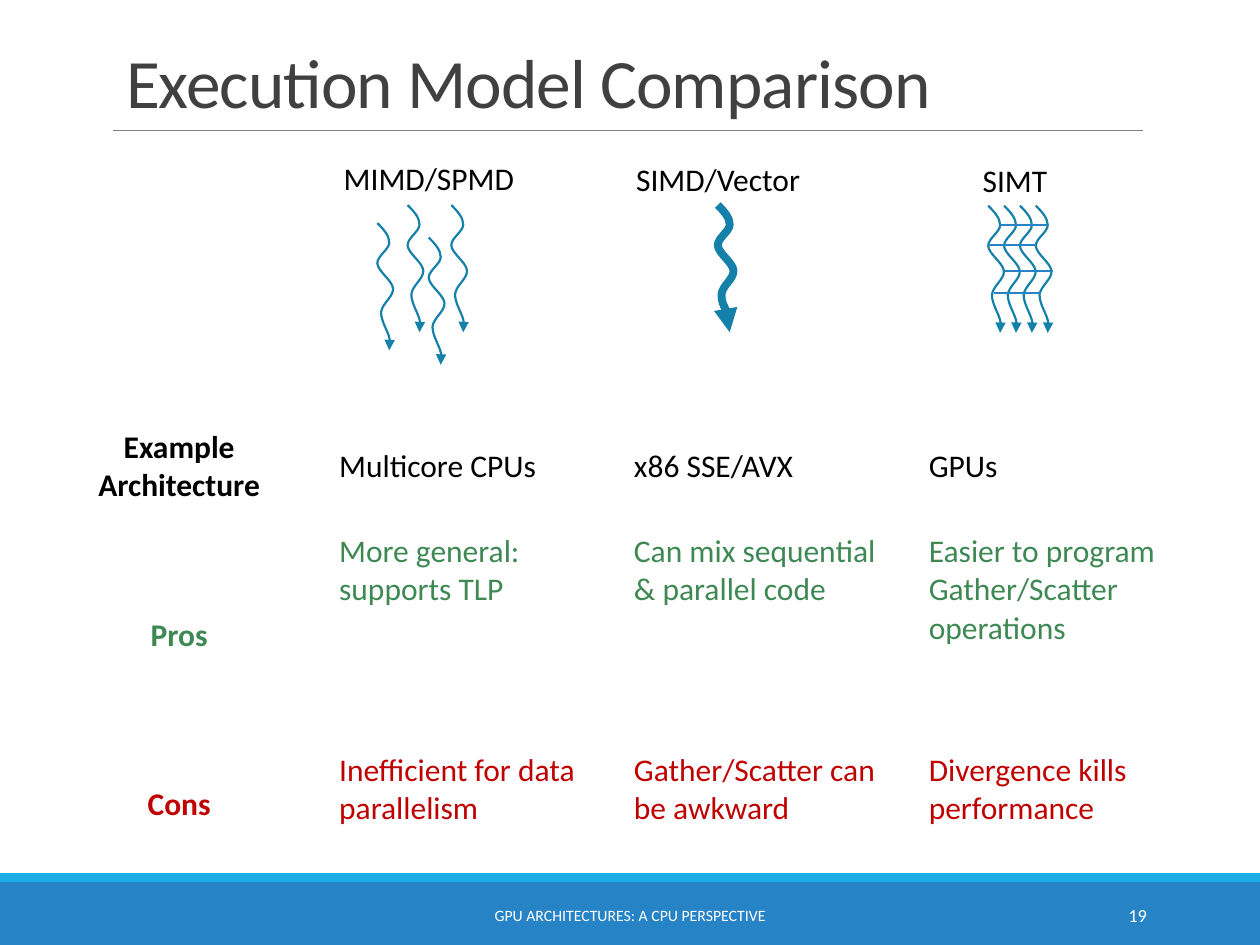
from collections import namedtuple

from lxml.etree import SubElement
from pptx import Presentation
from pptx.dml.color import RGBColor
from pptx.enum.shapes import MSO_CONNECTOR as Connector, MSO_SHAPE as Shape
from pptx.enum.text import MSO_ANCHOR as Anchor, MSO_AUTO_SIZE as AutoSize, PP_ALIGN as Align
from pptx.oxml.ns import qn
from pptx.util import Inches, Pt

Box = namedtuple("Box", "left top width height")

# The slide is a grid of 1000 columns by 750 rows.
COLUMNS, ROWS = 1000, 750
SLIDE_WIDTH, SLIDE_HEIGHT = Inches(10), Inches(7.5)
UNIT = SLIDE_WIDTH // COLUMNS

FONT = "Calibri"
BLACK, WHITE, GREEN, RED = "000000", "FFFFFF", "3E8853", "C00000"
BLUE, SKY, WAVE_BLUE = "2683C6", "1CADE4", "1580A9"

# Start of a thread, then two control points and an end for each curve.
WAVE_POINTS = [
    (0, 0),
    (5, 5), (9.5, 10), (9.5, 15.5),
    (9.5, 21), (0, 26), (0, 32),
    (0.5, 38.5), (12, 45.5), (12.5, 52),
    (13, 58.5), (3.5, 64), (3, 71),
    (3, 78), (8.5, 86), (9.5, 91),
    (10.5, 96), (10, 99), (9.5, 101),
]
TABLE_ROWS = [
    (94, BLACK, Anchor.MIDDLE,
     ["Example Architecture", "Multicore CPUs", "x86 SSE/AVX", "GPUs"]),
    (174, GREEN, Anchor.TOP,
     ["Pros", "More general: supports TLP", "Can mix sequential & parallel code",
      "Easier to program Gather/Scatter operations"]),
    (94, RED, Anchor.TOP,
     ["Cons", "Inefficient for data parallelism", "Gather/Scatter can be awkward",
      "Divergence kills performance"]),
]


def color(value):
    return RGBColor.from_string(value)


def grid(*lengths):
    return [round(length * UNIT) for length in lengths]


def write(frame, text, size, ink, align=Align.LEFT, bold=False):
    para = frame.paragraphs[0]
    para.alignment = align
    span = para.add_run()
    span.text = text
    span.font.name, span.font.size, span.font.bold = FONT, Pt(size), bold
    span.font.color.rgb = color(ink)
    return para, span


def add_label(page, box, text, size, ink, align=Align.LEFT, anchor=Anchor.MIDDLE):
    frame = page.shapes.add_textbox(*grid(*box)).text_frame
    frame.word_wrap = True
    frame.vertical_anchor = anchor
    write(frame, text, size, ink, align)
    return frame


def add_heading(page, box, text):
    frame = add_label(page, box, text, 18, BLACK, anchor=Anchor.TOP)
    frame.word_wrap = False
    frame.auto_size = AutoSize.SHAPE_TO_FIT_TEXT


def add_bar(page, box, fill):
    bar = page.shapes.add_shape(Shape.RECTANGLE, *grid(*box))
    bar.shadow.inherit = False
    bar.fill.solid()
    bar.fill.fore_color.rgb = color(fill)
    bar.line.fill.background()


def add_rule(shapes, left, right, row, ink, weight):
    rule = shapes.add_connector(Connector.STRAIGHT, *grid(left, row, right, row))
    rule.line.color.rgb = color(ink)
    rule.line.width = Pt(weight)
    SubElement(rule._element.spPr, qn("a:effectLst"))


def bend(wave):
    """Turn each three line segments of a freeform into one cubic curve."""
    segments = list(wave._element.iter(qn("a:lnTo")))
    outline = segments[0].getparent()
    for start in range(0, len(segments), 3):
        curve = SubElement(outline, qn("a:cubicBezTo"))
        for segment in segments[start:start + 3]:
            curve.append(segment[0])
            outline.remove(segment)


def add_wave(shapes, left, top, weight=1.25):
    points = [grid(left + x, top + y) for x, y in WAVE_POINTS]
    builder = shapes.build_freeform(*points[0])
    builder.add_line_segments(points[1:], close=False)
    wave = builder.convert_to_shape()
    bend(wave)
    wave.shadow.inherit = False
    wave.fill.background()
    wave.line.color.rgb = color(WAVE_BLUE)
    wave.line.width = Pt(weight)
    SubElement(wave.line._get_or_add_ln(), qn("a:tailEnd"), type="triangle")


def add_title(page, box):
    title = page.shapes.title
    title.left, title.top, title.width, title.height = grid(*box)
    frame = title.text_frame
    frame.auto_size = AutoSize.NONE
    frame.word_wrap = True
    frame.vertical_anchor = Anchor.BOTTOM
    para, span = write(frame, "Execution Model Comparison", 39.6, "404040")
    para.line_spacing = 0.85
    span.font._element.set("spc", "-50")
    add_rule(page.shapes, box.left, box.left + 817, box.top + 72, "808080", 0.5)


def add_footer(page, box):
    edge = 7
    add_bar(page, Box(box.left, box.top + edge, box.width, box.height - edge), BLUE)
    add_bar(page, Box(box.left, box.top, box.width, edge), SKY)
    top = box.top + 13.3
    add_label(page, Box(box.left + 302, top, 396, 40), "GPU ARCHITECTURES: A CPU PERSPECTIVE",
              9, WHITE, Align.CENTER)
    add_label(page, Box(box.left + 812, top, 108, 40), "19", 10.5, WHITE, Align.RIGHT)


def add_mimd(page, box):
    """Independent threads that start at different times."""
    add_heading(page, Box(box.left, box.top, box.width, 40), "MIMD/SPMD")
    for across, down in [(36.5, 56), (60.5, 41.7), (77.3, 67.5), (95.2, 41.7)]:
        add_wave(page.shapes, box.left + across, box.top + down)


def add_simd(page, box):
    """One wide thread."""
    add_heading(page, Box(box.left, box.top, box.width, 40), "SIMD/Vector")
    add_wave(page.shapes, box.left + 74.7, box.top + 40.7, 4.5)


def add_simt(page, box):
    """Four threads tied together in lockstep."""
    add_heading(page, Box(box.left, box.top, box.width, 40), "SIMT")
    shapes = page.shapes.add_group_shape().shapes
    left, top, gap = box.left + 14.3, box.top + 40.2, 12.6
    for thread in range(4):
        add_wave(shapes, left + thread * gap, top)
    for across, down in [(9.5, 15.5), (0, 31.2), (13.5, 52), (4.5, 69.3)]:
        add_rule(shapes, left + across, left + across + 3 * gap, top + down, BLUE, 1.25)


def add_comparison(page, box):
    count = len(TABLE_ROWS[0][-1])
    table = page.shapes.add_table(len(TABLE_ROWS), count, *grid(*box)).table
    table.first_row = table.horz_banding = False
    for column in table.columns:
        column.width = round(box.width * UNIT / count)
    for row, (height, ink, anchor, texts) in zip(table.rows, TABLE_ROWS):
        row.height = height * UNIT
        for index, (cell, text) in enumerate(zip(row.cells, texts)):
            heading = index == 0
            cell.fill.background()
            cell.vertical_anchor = Anchor.MIDDLE if heading else anchor
            write(cell.text_frame, text, 18, ink,
                  Align.CENTER if heading else Align.LEFT, heading)


def main():
    deck = Presentation()
    deck.slide_width, deck.slide_height = SLIDE_WIDTH, SLIDE_HEIGHT
    page = deck.slides.add_slide(deck.slide_layouts[5])
    add_footer(page, Box(0, 693, COLUMNS, ROWS - 693))
    add_title(page, Box(90, 31.4, 825, 71))
    add_mimd(page, Box(263, 121, 157, 168))
    add_simd(page, Box(495, 122, 152, 142))
    add_simt(page, Box(770, 123, 72, 141))
    add_comparison(page, Box(25.2, 323.5, 936, 362))
    deck.save("out.pptx")


if __name__ == "__main__":
    main()
